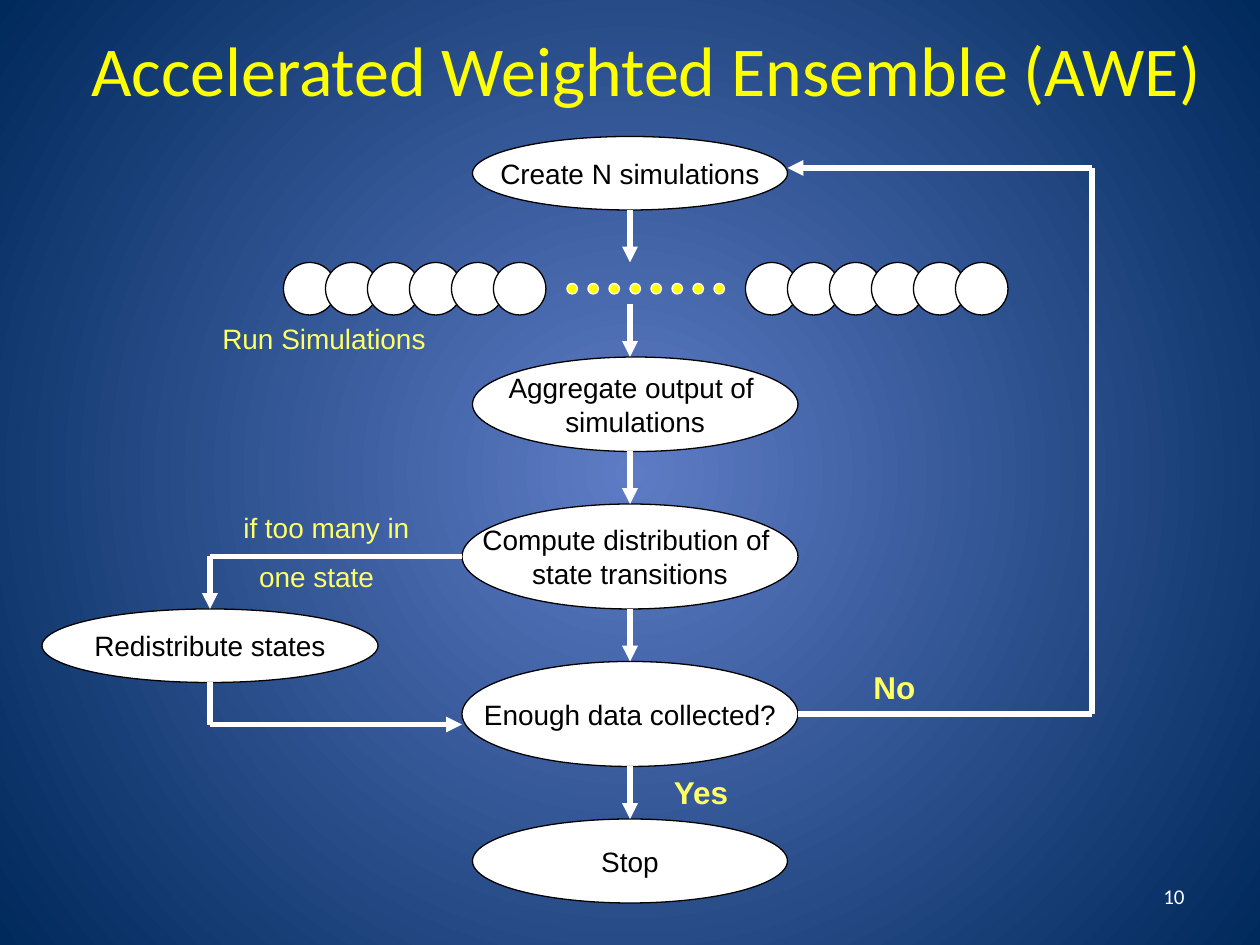
from dataclasses import dataclass
from itertools import pairwise

from lxml import etree
from pptx import Presentation
from pptx import util as u
from pptx.dml.color import RGBColor
from pptx.enum import shapes, text
from pptx.oxml import ns

PX = 9525  # EMU per px: the slide is 960 x 720 px
AXIS = 480  # x of the main flow


@dataclass(frozen=True)
class Theme:
    white: str = "FFFFFF"
    black: str = "000000"
    yellow: str = "FFFF00"
    label: str = "FFFF66"
    glow: str = "5E7CC5"
    navy: str = "00295C"
    title_font: str = "Calibri"
    body_font: str = "Arial"
    title_size: int = 40
    body_size: int = 16
    answer_size: int = 18
    number_size: int = 12
    outline: float = 0.75
    arrow: int = 3


THEME = Theme()


@dataclass(frozen=True)
class Box:
    left: int
    top: int
    width: int
    height: int

    def emu(self) -> list[int]:
        return [side * PX for side in (self.left, self.top, self.width, self.height)]


@dataclass(frozen=True)
class Step:
    words: str
    box: Box


@dataclass(frozen=True)
class Label:
    words: str
    box: Box
    size: int = THEME.body_size
    color: str = THEME.label
    font: str = THEME.body_font
    bold: bool = False
    align: text.PP_ALIGN = text.PP_ALIGN.LEFT
    anchor: text.MSO_ANCHOR = text.MSO_ANCHOR.TOP
    last_indent: int = 0


@dataclass(frozen=True)
class Route:
    points: tuple[tuple[int, int], ...]
    arrow: bool = True


@dataclass(frozen=True)
class Row:
    first: Box
    count: int
    pitch: int
    fill: str
    line: str


STEPS = [
    Step("Create N simulations", Box(360, 104, 240, 56)),
    Step("Aggregate output of \nsimulations", Box(360, 272, 248, 72)),
    Step("Compute distribution of \nstate transitions", Box(352, 384, 256, 80)),
    Step("Redistribute states", Box(32, 464, 256, 56)),
    Step("Enough data collected?", Box(352, 504, 256, 80)),
    Step("Stop", Box(360, 624, 240, 64)),
]
ROWS = [
    Row(Box(216, 200, 40, 40), 6, 32, THEME.white, THEME.black),
    Row(Box(568, 200, 40, 40), 6, 32, THEME.white, THEME.black),
    Row(Box(432, 216, 8, 8), 8, 16, THEME.yellow, THEME.white),
]
ROUTES = [Route(((AXIS, top), (AXIS, top + 40))) for top in (160, 232, 344, 464, 584)] + [
    Route(((352, 424), (160, 424), (160, 464))),
    Route(((160, 520), (160, 552), (352, 552))),
    Route(((608, 544), (832, 544), (832, 128), (600, 128))),
]
LABELS = [
    Label("Accelerated Weighted Ensemble (AWE)", Box(48, 0, 888, 104), THEME.title_size,
          THEME.yellow, THEME.title_font, align=text.PP_ALIGN.CENTER,
          anchor=text.MSO_ANCHOR.MIDDLE),
    Label("Run Simulations", Box(160, 240, 288, 36)),
    Label("if too many in\none state", Box(176, 384, 288, 74), last_indent=12),
    Label("No", Box(656, 504, 288, 38), THEME.answer_size, bold=True),
    Label("Yes", Box(504, 584, 288, 38), THEME.answer_size, bold=True),
    Label("10", Box(688, 664, 224, 38), THEME.number_size, THEME.white, THEME.title_font,
          align=text.PP_ALIGN.RIGHT, anchor=text.MSO_ANCHOR.MIDDLE),
]


def rgb(color: str) -> RGBColor:
    return RGBColor.from_string(color)


def write(frame, words: str, size: int, color: str, font: str, align, bold: bool = False) -> None:
    frame.text = words
    for paragraph in frame.paragraphs:
        paragraph.alignment = align
        for run in paragraph.runs:
            run.font.size = u.Pt(size)
            run.font.name = font
            run.font.bold = bold
            run.font.color.rgb = rgb(color)


def draw_background(slide) -> None:
    fill = slide.background.fill
    fill.gradient()
    for stop, color, position in zip(fill.gradient_stops, (THEME.glow, THEME.navy), (0, 1)):
        stop.color.rgb = rgb(color)
        stop.position = position
    gradient = slide.element.find(".//" + ns.qn("a:gradFill"))
    gradient.remove(gradient.find(ns.qn("a:lin")))
    circle = etree.SubElement(gradient, ns.qn("a:path"), {"path": "circle"})
    etree.SubElement(circle, ns.qn("a:fillToRect"), dict.fromkeys("ltrb", "50000"))


def draw_ellipse(slide, box: Box, fill: str, line: str):
    ellipse = slide.shapes.add_shape(shapes.MSO_SHAPE.OVAL, *box.emu())
    ellipse.shadow.inherit = False
    ellipse.fill.solid()
    ellipse.fill.fore_color.rgb = rgb(fill)
    ellipse.line.color.rgb = rgb(line)
    ellipse.line.width = u.Pt(THEME.outline)
    return ellipse


def draw_step(slide, step: Step) -> None:
    frame = draw_ellipse(slide, step.box, THEME.white, THEME.black).text_frame
    write(frame, step.words, THEME.body_size, THEME.black, THEME.body_font,
          text.PP_ALIGN.CENTER)
    frame.word_wrap = False
    frame.vertical_anchor = text.MSO_ANCHOR.MIDDLE


def draw_row(slide, row: Row) -> None:
    start = row.first
    for i in range(row.count):
        box = Box(start.left + i * row.pitch, start.top, start.width, start.height)
        draw_ellipse(slide, box, row.fill, row.line)


def draw_route(slide, route: Route) -> None:
    for start, end in pairwise(route.points):
        ends = [value * PX for value in (*start, *end)]
        segment = slide.shapes.add_connector(shapes.MSO_CONNECTOR.STRAIGHT, *ends)
        segment.line.color.rgb = rgb(THEME.white)
        segment.line.width = u.Pt(THEME.arrow)
        etree.SubElement(segment.element.spPr, ns.qn("a:effectLst"))
    if route.arrow:
        line = segment.element.spPr.find(ns.qn("a:ln"))
        etree.SubElement(line, ns.qn("a:tailEnd"), {"type": "triangle"})


def draw_label(slide, label: Label) -> None:
    frame = slide.shapes.add_textbox(*label.box.emu()).text_frame
    frame.word_wrap = True
    frame.vertical_anchor = label.anchor
    write(frame, label.words, label.size, label.color, label.font, label.align, label.bold)
    for paragraph in frame.paragraphs[1:]:
        paragraph.space_before = u.Pt(9)
    if label.last_indent:
        properties = frame.paragraphs[-1]._p.get_or_add_pPr()
        properties.set("marL", str(label.last_indent * PX))


def main() -> None:
    deck = Presentation()
    deck.slide_width, deck.slide_height = 960 * PX, 720 * PX
    slide = deck.slides.add_slide(deck.slide_layouts[6])
    draw_background(slide)
    # Flow steps, simulation rows, arrows, then free text
    for draw, parts in ((draw_step, STEPS), (draw_row, ROWS),
                        (draw_route, ROUTES), (draw_label, LABELS)):
        for part in parts:
            draw(slide, part)
    deck.save("out.pptx")


if __name__ == "__main__":
    main()
